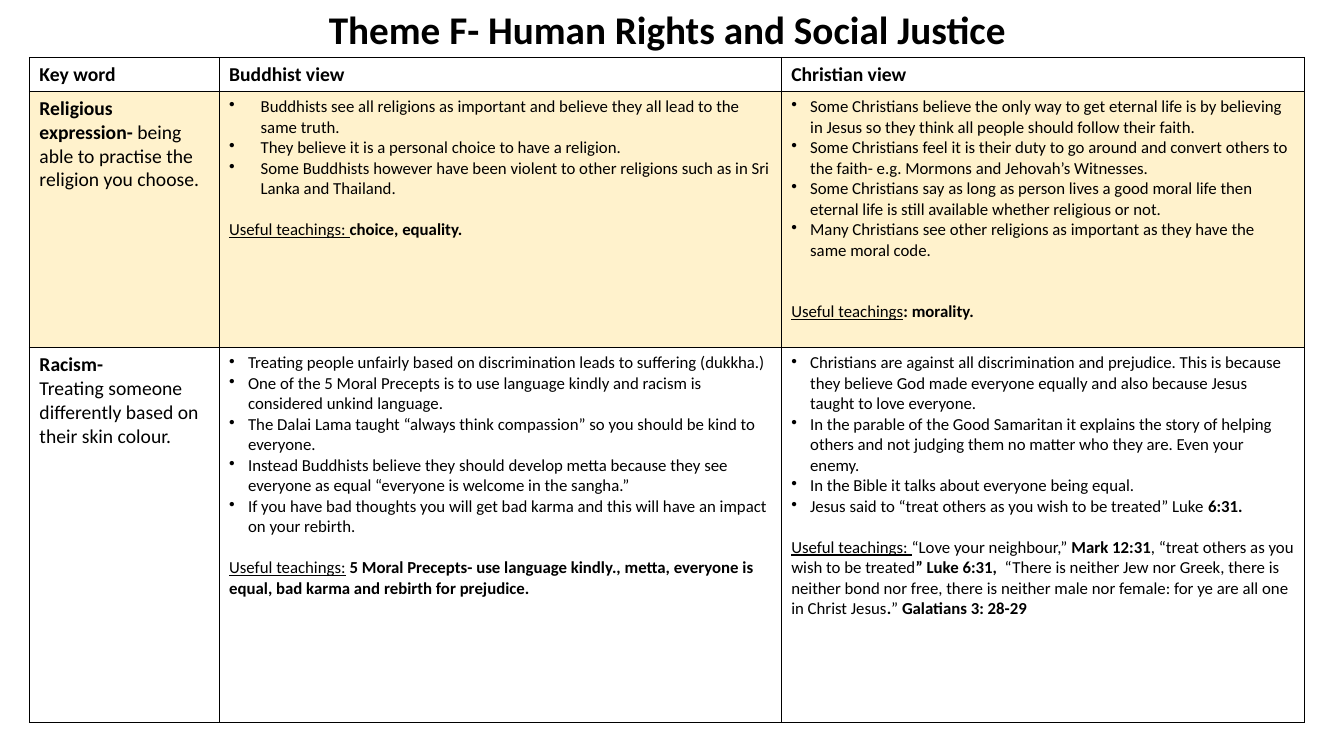
from dataclasses import dataclass

from lxml.etree import SubElement
from pptx import Presentation
from pptx.dml.color import RGBColor
from pptx.enum.text import MSO_AUTO_SIZE, PP_ALIGN
from pptx.oxml.ns import qn
from pptx.slide import Slide
from pptx.table import _Cell as Cell
from pptx.text.text import Font, TextFrame
from pptx.util import Pt

BLACK = "000000"
GOLD = "FFC000"
GOLD_OPACITY = 20
LINE_HEIGHT = 14.65
COLUMN_WIDTHS = (135.5, 401.5, 374)
ROW_HEIGHTS = (24.5, 183, 267.5)


@dataclass(frozen=True)
class Span:
    text: str
    bold: bool = False
    underline: bool = False


@dataclass(frozen=True)
class Line:
    spans: tuple[Span, ...]
    size: float = 12
    bullet_indent: float = 0
    space_before: float = 0


@dataclass(frozen=True)
class Entry:
    lines: tuple[Line, ...]
    shaded: bool = False


def bullets(*texts: str, indent: float = 13.5) -> tuple[Line, ...]:
    return tuple(Line((Span(text),), bullet_indent=indent) for text in texts)


def teachings(label: str, *spans: Span, blank_lines: int = 1) -> Line:
    return Line((Span(label, underline=True), *spans), space_before=blank_lines * LINE_HEIGHT)


def key_lines(*spans: Span) -> Line:
    return Line(spans, size=14)


ROWS = (
    tuple(
        Entry((key_lines(Span(heading, bold=True)),))
        for heading in ("Key word", "Buddhist view", "Christian view")
    ),
    (
        Entry((key_lines(
            Span("Religious expression- ", bold=True),
            Span("being able to practise the religion you choose."),
        ),), shaded=True),
        Entry((
            *bullets(
                "Buddhists see all religions as important and believe they all lead to the same truth.",
                "They believe it is a personal choice to have a religion.",
                "Some Buddhists however have been violent to other religions such as in Sri Lanka and Thailand.",
                indent=22.5,
            ),
            teachings("Useful teachings: ", Span("choice, equality.", bold=True)),
        ), shaded=True),
        Entry((
            *bullets(
                "Some Christians believe the only way to get eternal life is by believing in Jesus so they think all people should follow their faith.",
                "Some Christians feel it is their duty to go around and convert others to the faith- e.g. Mormons and Jehovah’s Witnesses.",
                "Some Christians say as long as person lives a good moral life then eternal life is still available whether religious or not.",
                "Many Christians see other religions as important as they have the same moral code.",
            ),
            teachings("Useful teachings", Span(": morality.", bold=True), blank_lines=2),
        ), shaded=True),
    ),
    (
        Entry((
            key_lines(Span("Racism-", bold=True)),
            key_lines(Span("Treating someone differently based on their skin colour.")),
        )),
        Entry((
            *bullets(
                "Treating people unfairly based on discrimination leads to suffering (dukkha.)",
                "One of the 5 Moral Precepts is to use language kindly and racism is considered unkind language.",
                "The Dalai Lama taught “always think compassion” so you should be kind to everyone.",
                "Instead Buddhists believe they should develop metta because they see everyone as equal “everyone is welcome in the sangha.”",
                "If you have bad thoughts you will get bad karma and this will have an impact on your rebirth.",
            ),
            teachings(
                "Useful teachings:",
                Span(" "),
                Span("5 Moral Precepts- use language kindly., metta, everyone is equal, bad karma and rebirth for prejudice.", bold=True),
            ),
        )),
        Entry((
            *bullets(
                "Christians are against all discrimination and prejudice. This is because they believe God made everyone equally and also because Jesus taught to love everyone.",
                "In the parable of the Good Samaritan it explains the story of helping others and not judging them no matter who they are. Even your enemy.",
                "In the Bible it talks about everyone being equal.",
            ),
            Line((
                Span("Jesus said to “treat others as you wish to be treated” Luke "),
                Span("6:31.", bold=True),
            ), bullet_indent=13.5),
            teachings(
                "Useful teachings: ",
                Span("“Love your neighbour,” "),
                Span("Mark 12:31", bold=True),
                Span(", “treat others as you wish to be treated"),
                Span("” Luke 6:31, ", bold=True),
                Span(" “There is neither Jew nor Greek, there is neither bond nor free, there is neither male nor female: for ye are all one in Christ Jesus"),
                Span(".", bold=True),
                Span("”"),
                Span(" Galatians 3: 28-29", bold=True),
            ),
        )),
    ),
)


def rgb(color: str) -> RGBColor:
    return RGBColor.from_string(color)


def style_font(font: Font, size: float) -> None:
    font.name = "Calibri"
    font.size = Pt(size)
    font.color.rgb = rgb(BLACK)


def write_lines(frame: TextFrame, lines: tuple[Line, ...]) -> None:
    for index, line in enumerate(lines):
        paragraph = frame.add_paragraph() if index else frame.paragraphs[0]
        if line.space_before:
            paragraph.space_before = Pt(line.space_before)
        if line.bullet_indent:
            properties = paragraph._p.get_or_add_pPr()
            properties.set("marL", str(Pt(line.bullet_indent)))
            properties.set("indent", str(-Pt(line.bullet_indent)))
            SubElement(properties, qn("a:buChar"), char="•")
        style_font(paragraph.font, line.size)
        uniform = len({span.bold for span in line.spans}) == 1
        if uniform:
            paragraph.font.bold = line.spans[0].bold
        for span in line.spans:
            run = paragraph.add_run()
            run.text = span.text
            if not uniform:
                run.font.bold = span.bold
            if span.underline:
                run.font.underline = True


def style_cell(cell: Cell, shaded: bool) -> None:
    properties = cell._tc.get_or_add_tcPr()
    for side in ("lnL", "lnR", "lnT", "lnB"):
        border = SubElement(properties, qn(f"a:{side}"), w=str(Pt(1)))
        SubElement(SubElement(border, qn("a:solidFill")), qn("a:srgbClr"), val=BLACK)
    if shaded:
        cell.fill.solid()
        cell.fill.fore_color.rgb = rgb(GOLD)
        color = properties.find(f"{qn('a:solidFill')}/{qn('a:srgbClr')}")
        SubElement(color, qn("a:alpha"), val=str(GOLD_OPACITY * 1000))
    else:
        cell.fill.background()


def add_views_table(slide: Slide) -> None:
    table = slide.shapes.add_table(
        len(ROW_HEIGHTS), len(COLUMN_WIDTHS),
        Pt(21), Pt(41), Pt(sum(COLUMN_WIDTHS)), Pt(sum(ROW_HEIGHTS)),
    ).table
    table.first_row = False
    table.horz_banding = False
    for column, width in zip(table.columns, COLUMN_WIDTHS):
        column.width = Pt(width)
    for row, height, entries in zip(table.rows, ROW_HEIGHTS, ROWS):
        row.height = Pt(height)
        for cell, entry in zip(row.cells, entries):
            style_cell(cell, entry.shaded)
            write_lines(cell.text_frame, entry.lines)


def add_title(slide: Slide) -> None:
    frame = slide.shapes.add_textbox(Pt(224.5), Pt(0), Pt(504), Pt(41)).text_frame
    frame.word_wrap = False
    frame.auto_size = MSO_AUTO_SIZE.SHAPE_TO_FIT_TEXT
    title = Span("Theme F- Human Rights and Social Justice", bold=True)
    write_lines(frame, (Line((title,), size=28),))
    frame.paragraphs[0].alignment = PP_ALIGN.CENTER


def main() -> None:
    presentation = Presentation()
    presentation.slide_width = Pt(960)
    presentation.slide_height = Pt(540)
    slide = presentation.slides.add_slide(presentation.slide_layouts[6])
    add_views_table(slide)
    add_title(slide)
    presentation.save("out.pptx")


if __name__ == "__main__":
    main()
